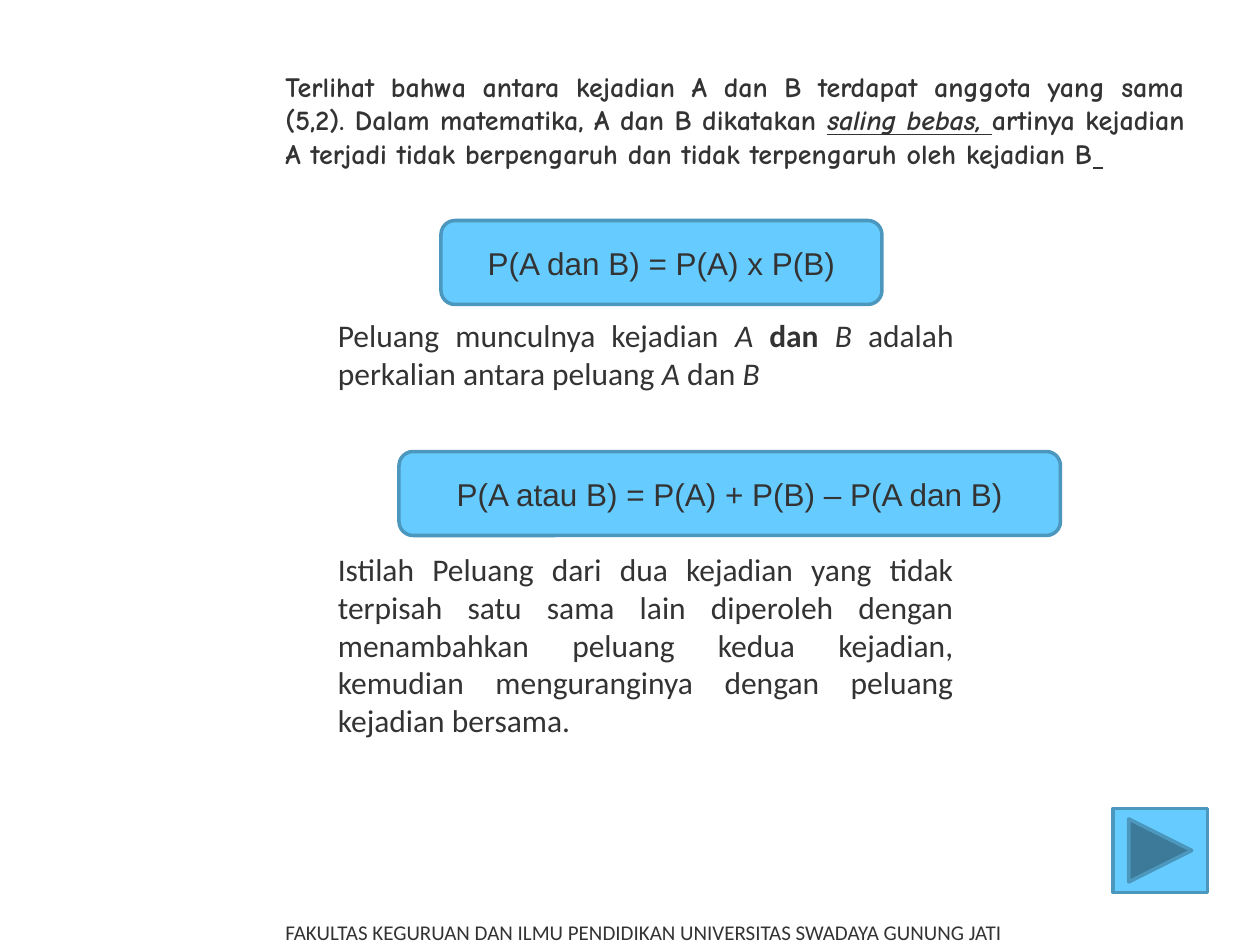
from pptx import Presentation
from pptx.dml.color import RGBColor
from pptx.enum.shapes import MSO_SHAPE as Shape
from pptx.enum.text import MSO_ANCHOR as Anchor, MSO_AUTO_SIZE as AutoSize, PP_ALIGN as Align
from pptx.util import Inches, Pt

COLORS = {"text": "333333", "fill": "66CCFF", "line": "4B97BD"}
UNIT = Inches(1) / 12  # the slide is a grid of 120 columns by 90 rows

COMIC = {"name": "Comic Neue", "size": Pt(16), "bold": True}
BODY = {"name": "Calibri", "size": Pt(18)}
FORMULA = {"name": "Arial", "size": Pt(18)}
FOOTER = {"name": "Calibri", "size": Pt(12)}
ITALIC = {"italic": True}
BOLD = {"bold": True}
STRESSED = {"italic": True, "underline": True}

# (column, row, columns wide, rows high), base font, alignment, wrap, runs
TEXTS = [
    ((26, 6, 88, 14.2), COMIC, Align.JUSTIFY, True, [
        ("Terlihat bahwa antara kejadian A dan B terdapat anggota yang sama (5,2). "
         "Dalam matematika, A dan B dikatakan ", {}),
        ("saling bebas, ", STRESSED),
        ("artinya kejadian A terjadi tidak berpengaruh dan tidak terpengaruh "
         "oleh kejadian B", {}),
        (" ", STRESSED),
    ]),
    ((31, 29.5, 61, 8.5), BODY, Align.JUSTIFY, True, [
        ("Peluang munculnya kejadian ", {}),
        ("A ", ITALIC),
        ("dan ", BOLD),
        ("B ", ITALIC),
        ("adalah perkalian antara peluang ", {}),
        ("A ", ITALIC),
        ("dan ", {}),
        ("B", ITALIC),
    ]),
    ((31, 51.8, 61, 23), BODY, Align.JUSTIFY, True, [
        ("Istilah Peluang dari dua kejadian yang tidak terpisah satu sama lain "
         "diperoleh dengan menambahkan peluang kedua kejadian, kemudian "
         "menguranginya dengan peluang kejadian bersama.", {}),
    ]),
    ((26, 87, 71.6, 3.6), FOOTER, Align.LEFT, False, [
        ("FAKULTAS KEGURUAN DAN ILMU PENDIDIKAN UNIVERSITAS SWADAYA GUNUNG JATI", {}),
    ]),
]

FORMULAS = [
    ((42, 21, 42, 8), "P(A dan B) = P(A) x P(B)"),
    ((38, 43, 63, 8), "P(A atau B) = P(A) + P(B) – P(A dan B)"),
]
NEXT_BUTTON = (106, 77, 9, 8)


def color(key):
    return RGBColor.from_string(COLORS[key])


def place(cell):
    return [round(n * UNIT) for n in cell]


def write(tf, runs, base, align):
    p = tf.paragraphs[0]
    p.alignment = align
    for text, extra in runs:
        r = p.add_run()
        r.text = text
        r.font.color.rgb = color("text")
        for key, value in {**base, **extra}.items():
            setattr(r.font, key, value)


def add_blue_shape(s, kind, cell):
    sp = s.shapes.add_shape(kind, *place(cell))
    sp.shadow.inherit = False
    sp.fill.solid()
    sp.fill.fore_color.rgb = color("fill")
    sp.line.color.rgb = color("line")
    sp.line.width = Pt(2)
    return sp


prs = Presentation()
prs.slide_width, prs.slide_height = Inches(10), Inches(7.5)
s = prs.slides.add_slide(prs.slide_layouts[6])

for cell, base, align, wrap, runs in TEXTS:
    tf = s.shapes.add_textbox(*place(cell)).text_frame
    tf.word_wrap = wrap
    tf.auto_size = AutoSize.SHAPE_TO_FIT_TEXT
    write(tf, runs, base, align)

for cell, formula in FORMULAS:
    tf = add_blue_shape(s, Shape.ROUNDED_RECTANGLE, cell).text_frame
    tf.vertical_anchor = Anchor.MIDDLE
    write(tf, [(formula, {})], FORMULA, Align.CENTER)

add_blue_shape(s, Shape.ACTION_BUTTON_FORWARD_OR_NEXT, NEXT_BUTTON)

prs.save("out.pptx")
